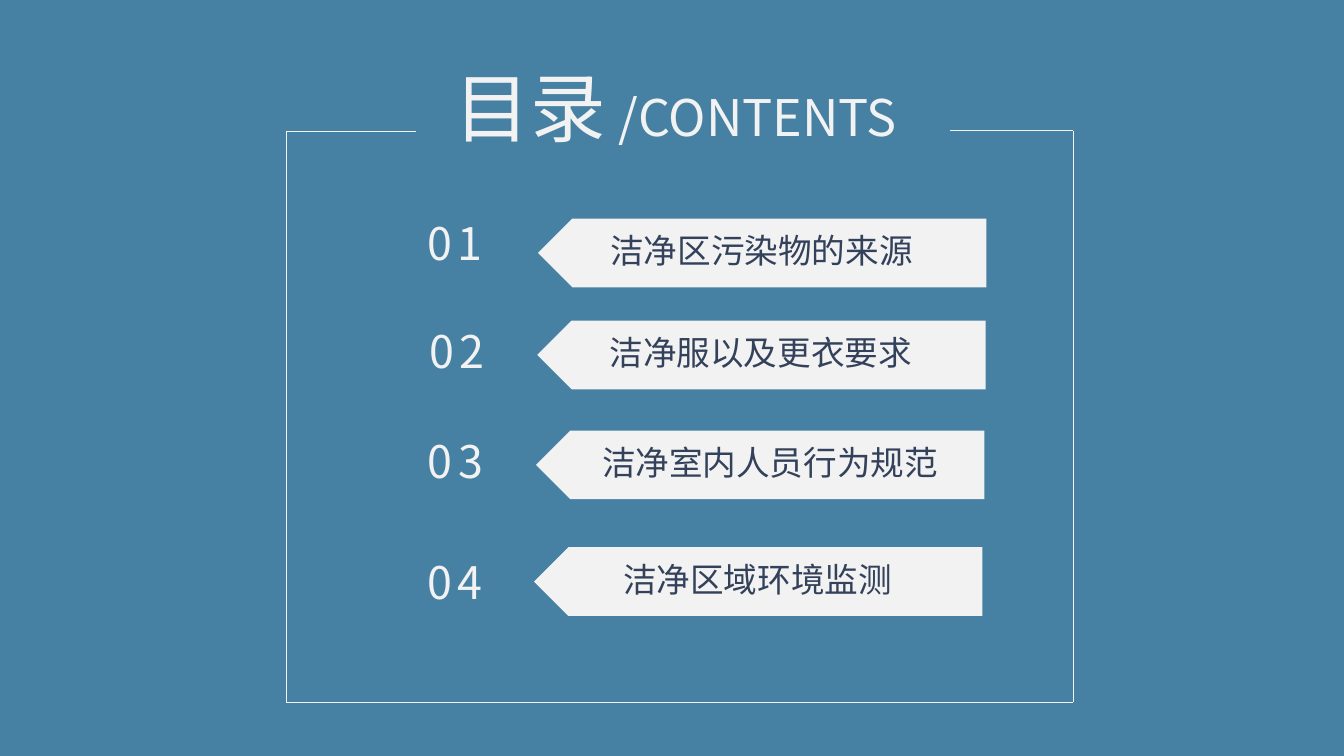
from lxml import etree
from pptx import Presentation
from pptx.dml.color import RGBColor
from pptx.enum.shapes import MSO_CONNECTOR, MSO_SHAPE
from pptx.enum.text import MSO_ANCHOR, MSO_AUTO_SIZE, PP_ALIGN
from pptx.oxml.ns import qn
from pptx.util import Cm, Pt

STRAIGHT, PENTAGON = MSO_CONNECTOR.STRAIGHT, MSO_SHAPE.PENTAGON
TOP, MIDDLE = MSO_ANCHOR.TOP, MSO_ANCHOR.MIDDLE
LEFT, CENTER = PP_ALIGN.LEFT, PP_ALIGN.CENTER
FIT_SHAPE = MSO_AUTO_SIZE.SHAPE_TO_FIT_TEXT

FONT = "Noto Sans CJK SC"
BLUE, PALE, NAVY = "4681A3", "F2F2F2", "33415B"

# Lengths are in centimetres.
TITLE = [("目录", 54), (" ", 40), ("/CONTENTS", 36)]
# number, its centre and top, label, its width, tag left and top
CHAPTERS = [
    ("01", 11.47, 5.51, "洁净区污染物的来源", 8.08, 13.56, 5.51),
    ("02", 11.52, 8.23, "洁净服以及更衣要求", 8.08, 13.54, 8.08),
    ("03", 11.48, 11.0, "洁净室内人员行为规范", 8.61, 13.51, 10.85),
    ("04", 11.47, 14.05, "洁净区域环境监测", 8.08, 13.46, 13.79),
]
NUMBER_WIDTH, NUMBER_HEIGHT = 2.2, 1.37
TAG_WIDTH, TAG_HEIGHT = 11.3, 1.73
LABEL_INDENT, LABEL_DROP, LABEL_HEIGHT = 1.59, 0.41, 1.02

FRAME_LEFT, FRAME_RIGHT, FRAME_TOP, FRAME_BOTTOM = 7.21, 27.05, 3.3, 17.7
RIGHT_STUB_TOP = 3.28
FRAME_LINES = [
    (FRAME_LEFT, FRAME_BOTTOM, FRAME_RIGHT, FRAME_BOTTOM),
    (FRAME_LEFT, FRAME_BOTTOM, FRAME_LEFT, FRAME_TOP),
    (FRAME_RIGHT, FRAME_BOTTOM, FRAME_RIGHT, FRAME_TOP),
    (FRAME_LEFT, FRAME_TOP, 10.49, FRAME_TOP),
    (23.93, RIGHT_STUB_TOP, FRAME_RIGHT, RIGHT_STUB_TOP),
]


def color(value):
    return RGBColor.from_string(value)


def write(box, spans, ink=PALE, align=CENTER, anchor=TOP, wrap=True, spacing=0):
    """Fill a box with one paragraph of (text, size) spans."""
    frame = box.text_frame
    frame.margin_left = frame.margin_right = frame.margin_top = frame.margin_bottom = 0
    frame.word_wrap, frame.auto_size = wrap, FIT_SHAPE
    frame.vertical_anchor = anchor
    para = frame.paragraphs[0]
    para.alignment, para.line_spacing = align, 0.9
    for text, size in spans:
        span = para.add_run()
        span.text = text
        span.font.size, span.font.name = Pt(size), FONT
        span.font.color.rgb = color(ink)
        properties = span.font._element
        etree.SubElement(properties, qn("a:ea")).set("typeface", FONT)
        if spacing:
            properties.set("spc", str(spacing * 100))


def add_text(page, left, top, width, height, text, size, **format):
    box = page.shapes.add_textbox(Cm(left), Cm(top), Cm(width), Cm(height))
    write(box, [(text, size)], **format)


def add_line(page, *ends):
    line = page.shapes.add_connector(STRAIGHT, *map(Cm, ends))
    line.line.color.rgb, line.line.width = color(PALE), Pt(0.5)
    etree.SubElement(line._element.spPr, qn("a:effectLst"))


def add_tag(page, left, top):
    """Add a pentagon that points left."""
    tag = page.shapes.add_shape(PENTAGON, Cm(left), Cm(top), Cm(TAG_WIDTH), Cm(TAG_HEIGHT))
    tag._element.spPr.find(qn("a:xfrm")).set("flipH", "1")
    tag.shadow.inherit = False
    tag.fill.solid()
    tag.fill.fore_color.rgb = color(PALE)
    tag.line.fill.background()


def main():
    deck = Presentation()
    deck.slide_width, deck.slide_height = Cm(33.87), Cm(19.05)
    page = deck.slides.add_slide(deck.slide_layouts.get_by_name("Title Only"))
    page.background.fill.solid()
    page.background.fill.fore_color.rgb = color(BLUE)

    title = page.shapes.title
    title.left, title.top, title.width, title.height = Cm(11.46), Cm(1.8), Cm(11.71), Cm(2.31)
    write(title, TITLE, align=LEFT, wrap=False)

    for ends in FRAME_LINES:
        add_line(page, *ends)

    for number, center, number_top, label, label_width, left, top in CHAPTERS:
        add_text(page, center - NUMBER_WIDTH / 2, number_top, NUMBER_WIDTH, NUMBER_HEIGHT,
                 number, 32, anchor=MIDDLE, spacing=4)
        add_tag(page, left, top)
        add_text(page, left + LABEL_INDENT, top + LABEL_DROP, label_width, LABEL_HEIGHT,
                 label, 24, ink=NAVY)

    deck.save("out.pptx")


if __name__ == "__main__":
    main()
